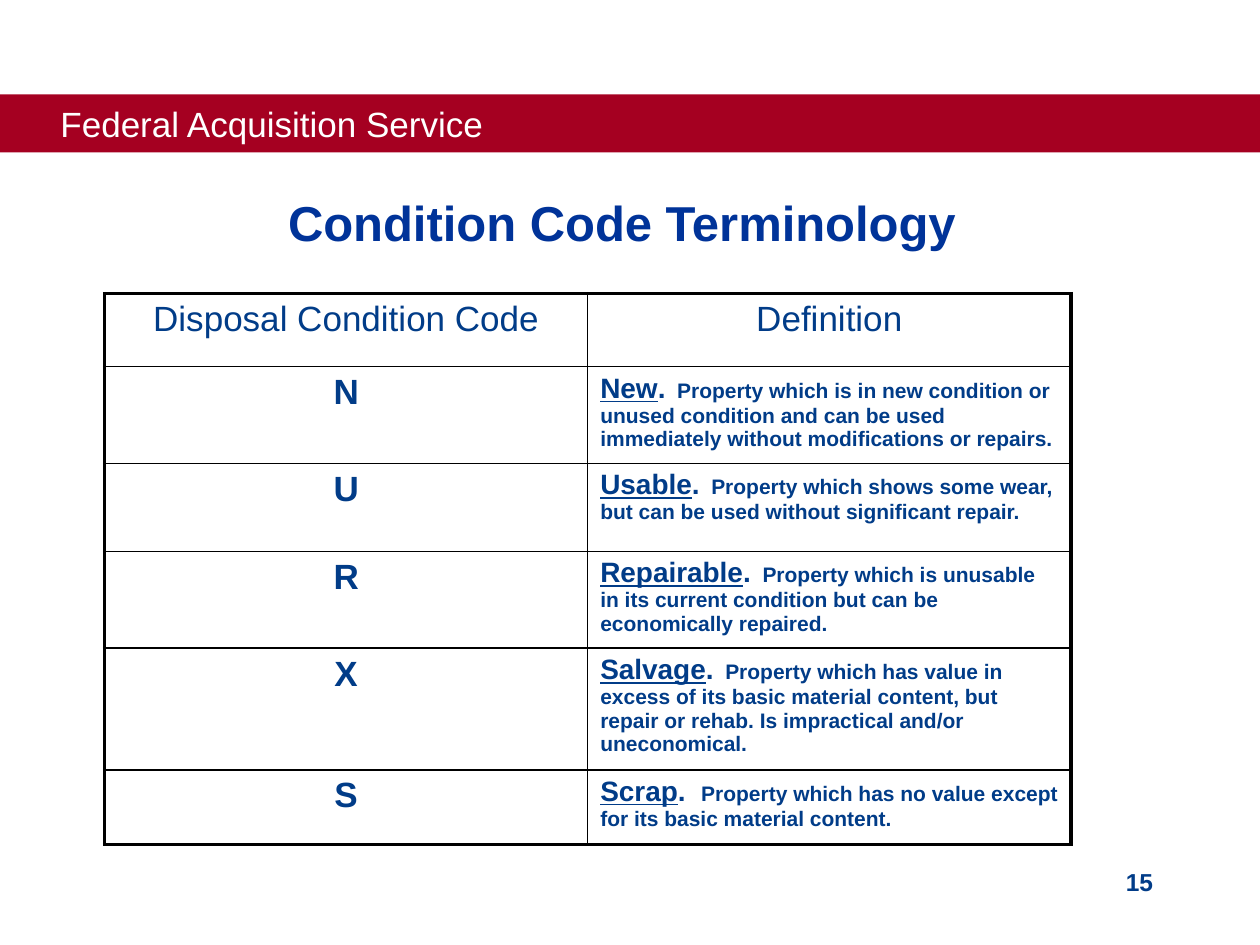
from dataclasses import dataclass

from lxml.etree import SubElement
from pptx import Presentation
from pptx.dml.color import RGBColor
from pptx.enum.shapes import MSO_SHAPE
from pptx.enum.text import MSO_ANCHOR, PP_ALIGN
from pptx.oxml.ns import qn
from pptx.util import Inches, Pt


@dataclass(frozen=True)
class Theme:
    font: str = "Arial"
    red: str = "A50021"
    white: str = "FFFFFF"
    blue: str = "003399"
    navy: str = "013C88"
    black: str = "000000"
    title: int = 28
    head: int = 20
    term: int = 16
    page: int = 14
    body: int = 12
    thick: float = 2.25
    thin: float = 1


THEME = Theme()
HEADS = ("Disposal Condition Code", "Definition")
# Code, term, stop after the term, meaning
CODES = [
    ("N", "New", ".", "  Property which is in new condition or unused condition "
     "and can be used immediately without modifications or repairs."),
    ("U", "Usable", ".", "  Property which shows some wear, but can be used "
     "without significant repair."),
    ("R", "Repairable", ".", "  Property which is unusable in its current "
     "condition but can be economically repaired."),
    ("X", "Salvage", ".", "  Property which has value in excess of its basic "
     "material content, but repair or rehab. Is impractical and/or uneconomical."),
    ("S", "Scrap", ".  ", "Property which has no value except for its basic "
     "material content."),
]
ROWS = (0.58, 0.76, 0.7, 0.76, 0.76, 0.59)


def style(run, size, color, bold=False, line=False):
    font = run.font
    font.name, font.size = THEME.font, Pt(size)
    font.bold, font.underline = bold, line
    font.color.rgb = RGBColor.from_string(color)


def write(frame, text, size, color, bold=False, align=PP_ALIGN.LEFT):
    frame.text = text
    para = frame.paragraphs[0]
    para.alignment = align
    style(para.runs[0], size, color, bold)


def add_bar(slide, box):
    bar = slide.shapes.add_shape(MSO_SHAPE.RECTANGLE, *map(Inches, box))
    bar.shadow.inherit = False
    bar.fill.solid()
    bar.fill.fore_color.rgb = RGBColor.from_string(THEME.red)
    bar.line.fill.background()
    frame = bar.text_frame
    frame.word_wrap = False
    frame.vertical_anchor = MSO_ANCHOR.MIDDLE
    frame.margin_left = Inches(0.48)
    write(frame, "Federal Acquisition Service", THEME.head, THEME.white)


def add_title(slide, box):
    frame = slide.shapes.add_textbox(*map(Inches, box)).text_frame
    frame.word_wrap = True
    frame.vertical_anchor = MSO_ANCHOR.BOTTOM
    frame.margin_left = Inches(0.22)
    write(frame, "Condition Code Terminology", THEME.title, THEME.blue,
          True, PP_ALIGN.CENTER)


def add_page(slide, box):
    frame = slide.shapes.add_textbox(*map(Inches, box)).text_frame
    frame.word_wrap = True
    write(frame, "15", THEME.page, THEME.navy, True, PP_ALIGN.RIGHT)


def set_edges(cell, widths):
    """Draw the left, right, top and bottom borders, in that order."""
    props = cell._tc.get_or_add_tcPr()
    for place, (side, width) in enumerate(zip("LRTB", widths)):
        edge = SubElement(props, qn(f"a:ln{side}"), w=str(Pt(width)))
        fill = SubElement(edge, qn("a:solidFill"))
        SubElement(fill, qn("a:srgbClr"), val=THEME.black)
        props.insert(place, edge)


def define(cell, term, stop, text):
    para = cell.text_frame.paragraphs[0]
    parts = ((term, THEME.term, True), (stop, THEME.term, False),
             (text, THEME.body, False))
    for words, size, line in parts:
        run = para.add_run()
        run.text = words
        style(run, size, THEME.navy, True, line)


def add_codes(slide, box):
    count = len(ROWS)
    table = slide.shapes.add_table(count, 2, *map(Inches, box)).table
    table.first_row = table.horz_banding = False
    for col in table.columns:
        col.width = Inches(box[2] / 2)
    for row, height in zip(table.rows, ROWS):
        row.height = Inches(height)

    # Heading row, then one row for each code
    for col, text in enumerate(HEADS):
        write(table.cell(0, col).text_frame, text, THEME.head, THEME.navy,
              align=PP_ALIGN.CENTER)
    for row, (code, *parts) in enumerate(CODES, 1):
        write(table.cell(row, 0).text_frame, code, THEME.head, THEME.navy,
              True, PP_ALIGN.CENTER)
        define(table.cell(row, 1), *parts)

    # Thick outer frame, thin inner lines
    for row in range(count):
        for col in range(2):
            cell = table.cell(row, col)
            cell.fill.background()
            outer = (col == 0, col == 1, row == 0, row == count - 1)
            set_edges(cell, [THEME.thick if out else THEME.thin for out in outer])


def main():
    deck = Presentation()
    deck.slide_width, deck.slide_height = Inches(10), Inches(7.5)
    slide = deck.slides.add_slide(deck.slide_layouts[6])
    add_bar(slide, (0, 0.75, 10, 0.46))
    add_page(slide, (7.17, 6.83, 2.08, 0.5))
    add_title(slide, (0.25, 1.42, 9.25, 0.62))
    add_codes(slide, (0.83, 2.33, 7.67, 4.37))
    deck.save("out.pptx")


if __name__ == "__main__":
    main()
